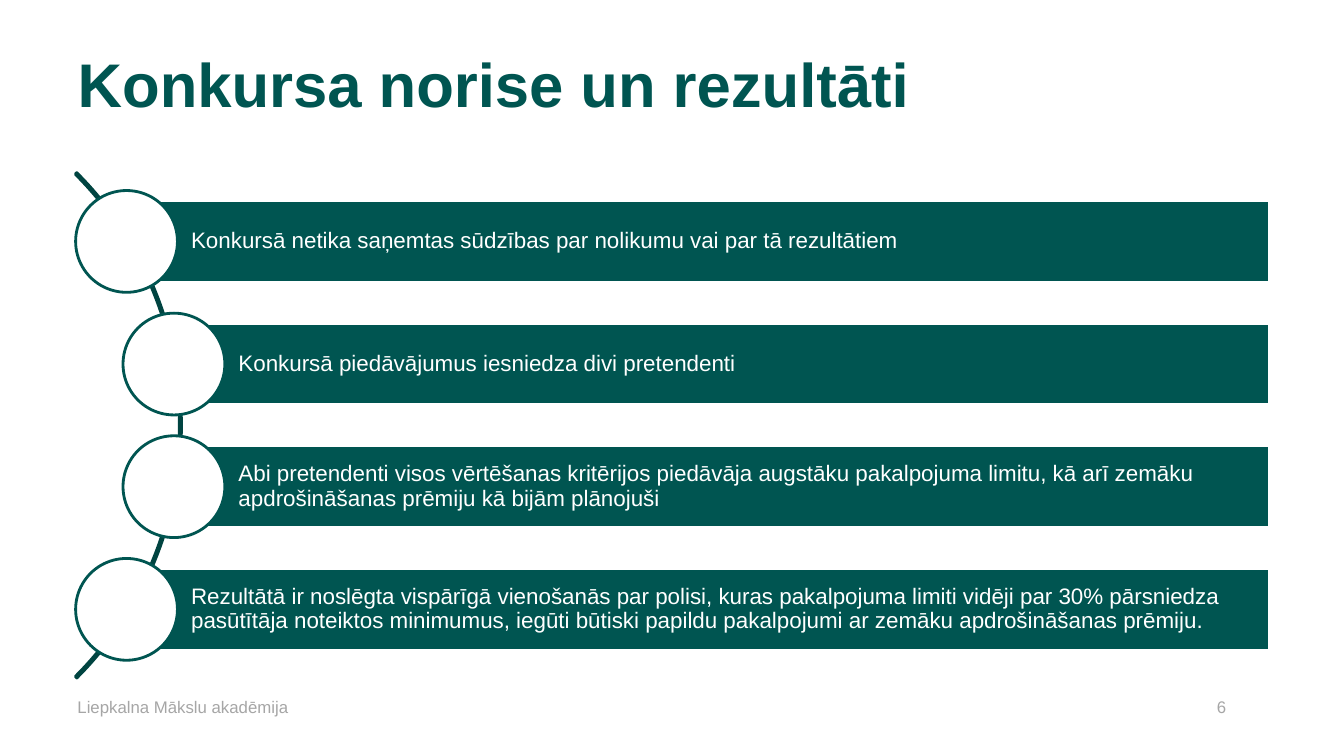
from pptx import Presentation
from pptx import util as u
from pptx.dml import color
from pptx.enum import shapes, text

HUES = {"green": "005551", "dark": "004441", "white": "FFFFFF", "gray": "A6A6A6"}
STEPS = [
    "Konkursā netika saņemtas sūdzības par nolikumu vai par tā rezultātiem",
    "Konkursā piedāvājumus iesniedza divi pretendenti",
    "Abi pretendenti visos vērtēšanas kritērijos piedāvāja augstāku pakalpojuma "
    "limitu, kā arī zemāku apdrošināšanas prēmiju kā bijām plānojuši",
    "Rezultātā ir noslēgta vispārīgā vienošanās par polisi, kuras pakalpojuma "
    "limiti vidēji par 30% pārsniedza pasūtītāja noteiktos minimumus, iegūti "
    "būtiski papildu pakalpojumi ar zemāku apdrošināšanas prēmiju.",
]
KINDS = shapes.MSO_SHAPE
ANCHOR = text.MSO_ANCHOR


def hue(name):
    return color.RGBColor.from_string(HUES[name])


def inch(*sizes):
    return [u.Inches(size) for size in sizes]


def write(shape, words, size=16, tint="white", bold=False, anchor=ANCHOR.MIDDLE,
          insets=(0.1, 0.05, 0.1, 0.05), spacing=1.0):
    frame = shape.text_frame
    frame.word_wrap = True
    frame.auto_size = text.MSO_AUTO_SIZE.NONE
    frame.vertical_anchor = anchor
    (frame.margin_left, frame.margin_top,
     frame.margin_right, frame.margin_bottom) = inch(*insets)
    para = frame.paragraphs[0]
    para.alignment = text.PP_ALIGN.LEFT
    para.line_spacing = spacing
    run = para.add_run()
    run.text = words
    run.font.name = "Arial"
    run.font.size = u.Pt(size)
    run.font.bold = bold
    run.font.color.rgb = hue(tint)


def draw(slide, kind, box, fill=None, line="white"):
    shape = slide.shapes.add_shape(kind, *inch(*box))
    shape.shadow.inherit = False
    if fill:
        shape.fill.solid()
        shape.fill.fore_color.rgb = hue(fill)
    else:
        shape.fill.background()
    shape.line.color.rgb = hue(line)
    shape.line.width = u.Pt(2)
    return shape


def head(slide, box):
    title = slide.shapes.title
    title.left, title.top, title.width, title.height = inch(*box)
    write(title, "Konkursa norise un rezultāti", size=44, tint="green", bold=True)


def foot(slide, box):
    left, top, width, height = box
    notes = [("Liepkalna Mākslu akadēmija", left, 3.6),
             ("6", left + width - 0.7, 0.7)]
    for words, start, span in notes:
        note = slide.shapes.add_textbox(*inch(start, top, span, height))
        write(note, words, size=12, tint="gray", anchor=ANCHOR.TOP)


def curve(slide, box):
    left, top, width, height = box
    # Quarter arc bulging to the right, centred on the list
    size = 7.09
    arc = draw(slide, KINDS.BLOCK_ARC,
               (left - 6.04, top + height / 2 - size / 2, size, size), line="dark")
    for index, value in enumerate((189, 27, 0.003)):
        arc.adjustments[index] = value

    # Bars start at the centre of their circles
    disc, thick = 1.01, 0.81
    gap = (height - disc) / (len(STEPS) - 1)
    for index, words in enumerate(STEPS):
        shift = 0.47 if 0 < index < len(STEPS) - 1 else 0
        x, y = left + shift, top + index * gap
        start = x + disc / 2
        bar = draw(slide, KINDS.RECTANGLE,
                   (start, y + (disc - thick) / 2, left + width - start, thick),
                   fill="green")
        write(bar, words, insets=(0.64, 0.04, 0.04, 0.04), spacing=0.9)
        draw(slide, KINDS.OVAL, (x, y, disc, disc), fill="white", line="green")


def main():
    deck = Presentation()
    deck.slide_width, deck.slide_height = inch(13.33, 7.5)
    slide = deck.slides.add_slide(deck.slide_layouts[5])
    head(slide, (0.67, 0.4, 12, 0.84))
    foot(slide, (0.67, 6.86, 12, 0.4))
    curve(slide, (0.75, 1.89, 11.84, 4.66))
    deck.save("out.pptx")


if __name__ == "__main__":
    main()
